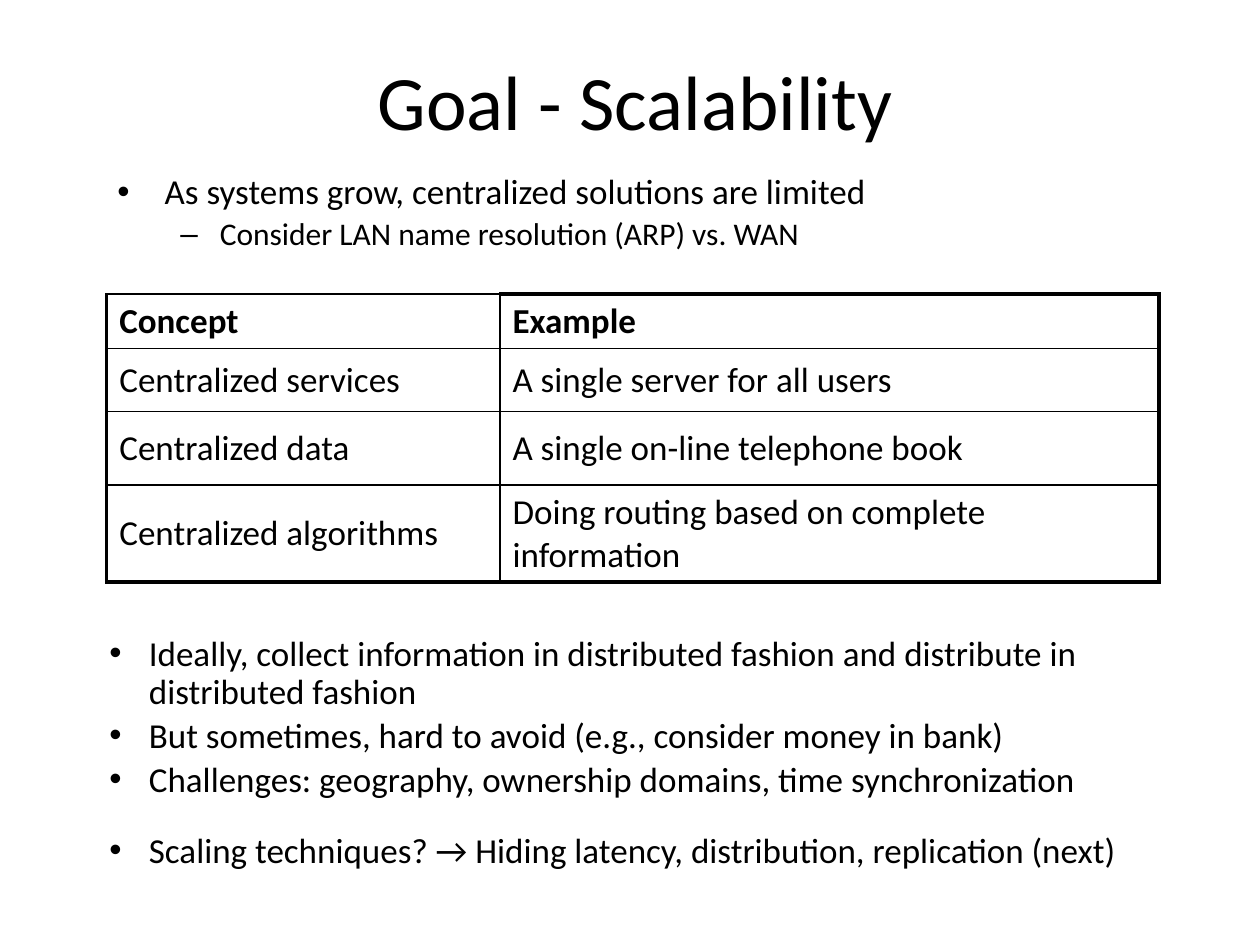
"""Build the scalability slide: title, bullet lists and a table of concepts."""
from dataclasses import dataclass

from lxml.etree import SubElement
from pptx import Presentation
from pptx.dml.color import RGBColor
from pptx.enum.text import MSO_ANCHOR, PP_ALIGN
from pptx.oxml.ns import qn
from pptx.util import Pt


@dataclass(frozen=True)
class Theme:
    font: str = "Calibri"
    ink: str = "000000"
    title: float = 44
    body: float = 20
    detail: float = 18
    thin: float = 1
    thick: float = 2.25


@dataclass(frozen=True)
class Bullet:
    text: str
    size: float
    margin: float
    hanging: float
    symbol: str = "•"
    level: int = 0
    space_before: float = 3.5


THEME = Theme()
INTRODUCTION = [
    Bullet("As systems grow, centralized solutions are limited", THEME.body, 27, 27),
    Bullet("Consider LAN name resolution (ARP) vs. WAN", THEME.detail, 58.5, 22.5, "–", 1),
]
CONCLUSIONS = [
    Bullet("Ideally, collect information in distributed fashion and distribute in "
           "distributed fashion", THEME.body, 22.5, 22.5),
    Bullet("But sometimes, hard to avoid (e.g., consider money in bank)", THEME.body, 22.5, 22.5),
    Bullet("Challenges: geography, ownership domains, time synchronization",
           THEME.body, 22.5, 22.5),
    Bullet("Scaling techniques? → Hiding latency, distribution, replication (next)",
           THEME.body, 22.5, 22.5, space_before=19),
]
CONCEPTS = [
    ("Concept", "Example"),
    ("Centralized services", "A single server for all users"),
    ("Centralized data", "A single on-line telephone book"),
    ("Centralized algorithms", "Doing routing based on complete information"),
]
COLUMN_WIDTHS = (224.7, 376.5)
ROW_HEIGHTS = (24, 36, 42, 36)


def style_text(paragraph, size, bold=False):
    font = paragraph.font
    font.name = THEME.font
    font.size = Pt(size)
    font.bold = bold
    font.color.rgb = RGBColor.from_string(THEME.ink)


def add_text_frame(slide, left, top, width, height):
    text_frame = slide.shapes.add_textbox(Pt(left), Pt(top), Pt(width), Pt(height)).text_frame
    text_frame.word_wrap = True
    return text_frame


def add_title(slide, text):
    text_frame = add_text_frame(slide, 57, 12, 612, 90)
    text_frame.vertical_anchor = MSO_ANCHOR.MIDDLE
    paragraph = text_frame.paragraphs[0]
    paragraph.text = text
    paragraph.alignment = PP_ALIGN.CENTER
    style_text(paragraph, THEME.title)


def format_bullet(paragraph, bullet):
    paragraph.text = bullet.text
    paragraph.level = bullet.level
    paragraph.line_spacing = 0.9
    paragraph.space_before = Pt(bullet.space_before)
    properties = paragraph._p.get_or_add_pPr()
    properties.set("marL", str(Pt(bullet.margin)))
    properties.set("indent", str(-Pt(bullet.hanging)))
    SubElement(properties, qn("a:buFont"), typeface="Arial")
    SubElement(properties, qn("a:buChar"), char=bullet.symbol)
    style_text(paragraph, bullet.size)


def add_bullets(slide, bullets, left, top, width, height):
    text_frame = add_text_frame(slide, left, top, width, height)
    for index, bullet in enumerate(bullets):
        paragraph = text_frame.add_paragraph() if index else text_frame.paragraphs[0]
        format_bullet(paragraph, bullet)


def set_borders(cell, thick_sides):
    properties = cell._tc.get_or_add_tcPr()
    for side in "LRTB":
        width = THEME.thick if side in thick_sides else THEME.thin
        line = SubElement(properties, qn(f"a:ln{side}"), w=str(Pt(width)))
        fill = SubElement(line, qn("a:solidFill"))
        SubElement(fill, qn("a:srgbClr"), val=THEME.ink)


def find_thick_sides(row, column):
    last_row, last_column = len(CONCEPTS) - 1, len(COLUMN_WIDTHS) - 1
    rules = {
        "L": column == 0,
        "R": column == last_column,
        "T": row == 0 and column == last_column,
        "B": row == last_row,
    }
    return {side for side, is_thick in rules.items() if is_thick}


def add_concept_table(slide, left, top):
    table = slide.shapes.add_table(
        len(CONCEPTS), len(COLUMN_WIDTHS), Pt(left), Pt(top),
        Pt(sum(COLUMN_WIDTHS)), Pt(sum(ROW_HEIGHTS))).table
    table.horz_banding = False
    for column, width in zip(table.columns, COLUMN_WIDTHS):
        column.width = Pt(width)
    for row_index, (texts, height) in enumerate(zip(CONCEPTS, ROW_HEIGHTS)):
        table.rows[row_index].height = Pt(height)
        for column_index, text in enumerate(texts):
            cell = table.cell(row_index, column_index)
            cell.text = text
            cell.vertical_anchor = MSO_ANCHOR.MIDDLE
            style_text(cell.text_frame.paragraphs[0], THEME.body, bold=row_index == 0)
            set_borders(cell, find_thick_sides(row_index, column_index))
            cell.fill.background()


def main():
    presentation = Presentation()
    presentation.slide_width, presentation.slide_height = Pt(720), Pt(540)
    slide = presentation.slides.add_slide(presentation.slide_layouts[6])
    add_title(slide, "Goal - Scalability")
    add_bullets(slide, INTRODUCTION, 60, 96, 612, 84)
    add_concept_table(slide, 61, 168)
    add_bullets(slide, CONCLUSIONS, 55.5, 360, 612, 138)
    presentation.save("out.pptx")


if __name__ == "__main__":
    main()
